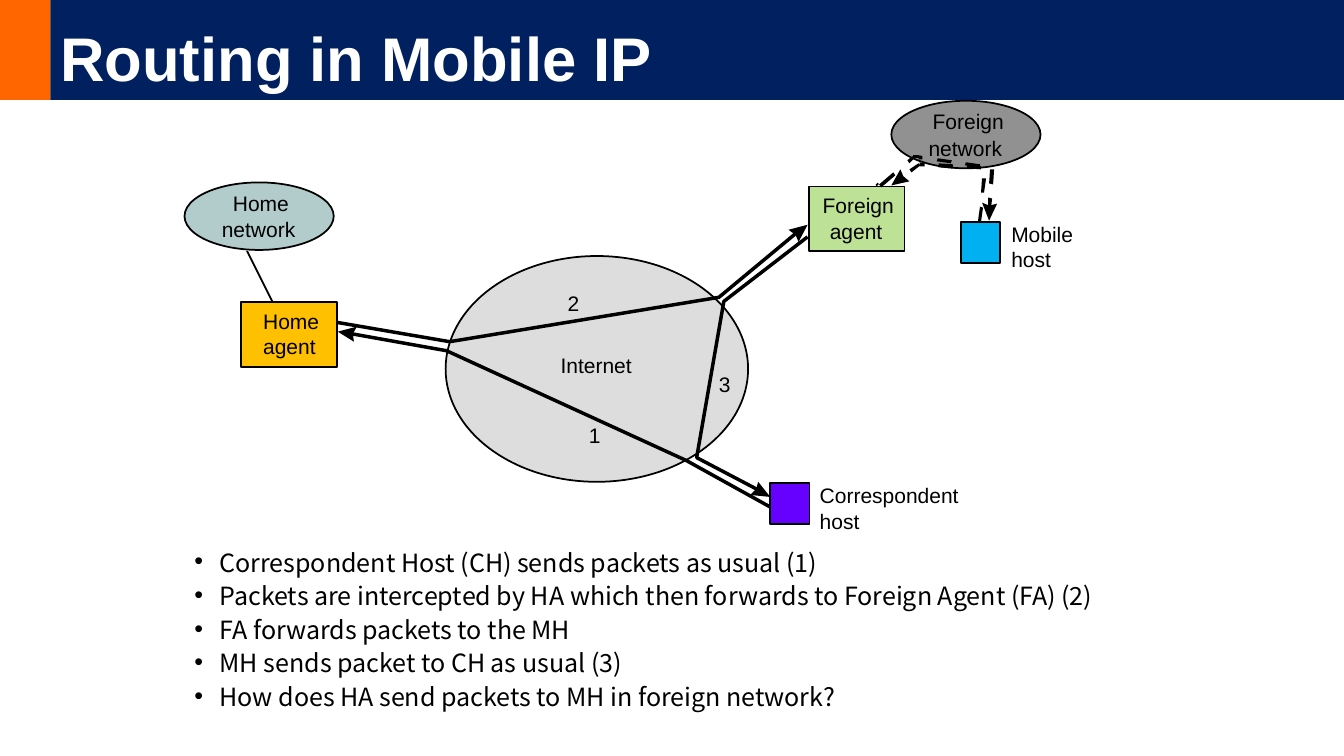
from pptx import Presentation
from pptx.util import Inches, Pt
from pptx.dml.color import RGBColor
from pptx.enum.shapes import MSO_SHAPE as Shape, MSO_CONNECTOR as Link
from pptx.enum.text import MSO_ANCHOR as Anchor, MSO_AUTO_SIZE as Fit, PP_ALIGN as Align
from pptx.oxml.ns import qn
from lxml import etree

HEX = {"orange": "FF6600", "navy": "002060", "white": "FFFFFF", "black": "000000",
       "green": "92D050", "gold": "FFC000", "pale": "DDDDDD", "teal": "B1CCCB",
       "grey": "919191", "violet": "6600FF", "blue": "00B0F0"}

TITLE = "Routing in Mobile IP"
BULLETS = [
    "Correspondent Host (CH) sends packets as usual (1)",
    "Packets are intercepted by HA which then forwards to Foreign Agent (FA) (2)",
    "FA forwards packets to the MH",
    "MH sends packet to CH as usual (3)",
    "How does HA send packets to MH in foreign network?",
]

# Nodes: shape, left, top, width, height, colour
AGENT, CLOUD, HOST = (0.95, 0.64), (1.48, 0.67), (0.39, 0.41)
NODES = [
    (Shape.RECTANGLE, 8.02, 1.85, *AGENT, "green"),
    (Shape.RECTANGLE, 2.39, 3, *AGENT, "gold"),
    (Shape.OVAL, 4.42, 2.54, 3, 2.24, "pale"),
    (Shape.OVAL, 1.83, 1.81, *CLOUD, "teal"),
    (Shape.OVAL, 8.84, 1, *CLOUD, "grey"),
    (Shape.RECTANGLE, 7.64, 4.79, *HOST, "violet"),
    (Shape.RECTANGLE, 9.53, 2.2, *HOST, "blue"),
]

# Labels: text, left, top, width
LABELS = [
    ("Home", 2.61, 3.06, 0.56), ("agent", 2.61, 3.31, 0.52),
    ("Foreign", 8.16, 1.91, 0.71), ("agent", 8.23, 2.17, 0.52),
    ("Home", 2.31, 1.89, 0.56), ("network", 2.2, 2.15, 0.73),
    ("Foreign", 9.25, 1.08, 0.71), ("network", 9.21, 1.34, 0.73),
    ("Internet", 5.56, 3.5, 0.71),
    ("Correspondent", 8.13, 4.79, 1.38), ("host", 8.13, 5.04, 0.39),
    ("Mobile", 10.03, 2.2, 0.62), ("host", 10.03, 2.45, 0.39),
    ("1", 5.84, 4.19, 0.12), ("2", 5.63, 2.88, 0.12), ("3", 7.13, 3.69, 0.12),
]
SLACK = 0.03  # spare width that keeps each label on one line

# Plain links between nodes
LINKS = [((2.45, 2.49), (2.7, 2.99)), ((8.69, 1.84), (8.71, 1.82))]

# Packet routes 1, 2 and 3
ROUTES = [
    [(7.64, 5.03), (6.81, 4.57), (4.43, 3.48), (3.48, 3.31)],
    [(3.35, 3.2), (4.46, 3.39), (7.13, 2.95), (7.9, 2.31)],
    [(8.01, 2.35), (7.18, 2.99), (6.91, 4.54), (7.52, 4.86)],
]

HEADS = [
    [(3.54, 3.24), (3.5, 3.31), (3.51, 3.39), (3.35, 3.29)],
    [(7.92, 2.4), (7.89, 2.33), (7.82, 2.28), (8.01, 2.23)],
    [(9.74, 2.01), (9.81, 2.04), (9.89, 2.02), (9.81, 2.19)],
    [(8.93, 1.68), (8.96, 1.75), (9.02, 1.8), (8.84, 1.84)],
    [(7.44, 4.91), (7.5, 4.85), (7.52, 4.78), (7.64, 4.93)],
]

# Dashes from foreign agent to mobile host, then back
DASHES = [
    [(8.72, 1.83), (8.74, 1.86), (8.88, 1.74), (8.86, 1.71)],
    [(9, 1.59), (9.02, 1.62), (9.07, 1.57), (9.05, 1.55)],
    [(9.06, 1.54), (9.11, 1.54), (9.11, 1.57), (9.06, 1.57)],
    [(9.12, 1.54), (9.11, 1.58), (9.15, 1.58), (9.15, 1.55)],
    [(9.3, 1.57), (9.29, 1.6), (9.43, 1.62), (9.44, 1.59)],
    [(9.58, 1.61), (9.57, 1.64), (9.72, 1.66), (9.72, 1.63)],
    [(9.86, 1.68), (9.82, 1.68), (9.81, 1.82), (9.85, 1.83)],
    [(9.84, 1.97), (9.8, 1.96), (9.8, 2.06), (9.83, 2.06)],
    [(9.7, 2.19), (9.73, 2.2), (9.75, 2.06), (9.72, 2.05)],
    [(9.73, 1.91), (9.76, 1.91), (9.78, 1.77), (9.74, 1.77)],
    [(9.73, 1.68), (9.73, 1.65), (9.59, 1.64), (9.59, 1.67)],
    [(9.45, 1.67), (9.45, 1.63), (9.31, 1.62), (9.31, 1.66)],
    [(9.17, 1.65), (9.17, 1.62), (9.12, 1.61), (9.12, 1.65)],
    [(9.13, 1.64), (9.11, 1.62), (9.02, 1.68), (9.04, 1.71)],
]

deck = Presentation()
deck.slide_width, deck.slide_height = Inches(13.33), Inches(7.5)
slide = deck.slides.add_slide(deck.slide_layouts[6])
shapes = slide.shapes


def color(name):
    return RGBColor.from_string(HEX[name])


def paint(shape, fill=None, width=None):
    shape.shadow.inherit = False
    if fill:
        shape.fill.solid()
        shape.fill.fore_color.rgb = color(fill)
    else:
        shape.fill.background()
    if width:
        shape.line.color.rgb = color("black")
        shape.line.width = Pt(width)
    else:
        shape.line.fill.background()


def add_box(kind, x, y, w, h, fill, width=None):
    box = shapes.add_shape(kind, *map(Inches, (x, y, w, h)))
    paint(box, fill, width)
    return box


def add_free(points, close, fill=None, width=None):
    spots = [(Inches(x), Inches(y)) for x, y in points]
    pen = shapes.build_freeform(*spots[0], scale=1.0)
    pen.add_line_segments(spots[1:], close=close)
    paint(pen.convert_to_shape(), fill, width)


def style(para, face, size, tint="black", bold=False):
    for run in para.runs:
        font = run.font
        font.name, font.size, font.bold = face, Pt(size), bold
        font.color.rgb = color(tint)


# Title band
add_box(Shape.RECTANGLE, 0, 0, 0.5, 0.99, "orange")
band = add_box(Shape.RECTANGLE, 0.5, 0, 12.83, 0.99, "navy")
frame = band.text_frame
frame.text = TITLE
frame.vertical_anchor = Anchor.BOTTOM
head = frame.paragraphs[0]
head.alignment = Align.LEFT
head.line_spacing = 0.9
style(head, "Arial", 44, "white", True)

# Bullet list
frame = shapes.add_textbox(*map(Inches, (1.83, 5.46, 9.91, 1.87))).text_frame
frame.word_wrap = True
frame.text = "\n".join(BULLETS)
for para in frame.paragraphs:
    para.line_spacing = 0.7
    para.space_before = Pt(8.95)
    props = para._p.get_or_add_pPr()
    props.set("marL", str(Inches(0.25)))
    props.set("indent", str(-Inches(0.25)))
    etree.SubElement(props, qn("a:buFont")).set("typeface", "Arial")
    etree.SubElement(props, qn("a:buChar")).set("char", "•")
    style(para, "Noto Sans CJK KR", 17.9)

# Network nodes
for kind, x, y, w, h, fill in NODES:
    node = add_box(kind, x, y, w, h, fill, 1.25)
    if fill == "green":
        tone = node.fill._xPr.find(qn("a:solidFill"))[0]
        etree.SubElement(tone, qn("a:alpha")).set("val", "60000")

# Labels
for text, x, y, w in LABELS:
    frame = shapes.add_textbox(*map(Inches, (x, y, w + SLACK, 0.25))).text_frame
    frame.margin_left = frame.margin_right = frame.margin_top = frame.margin_bottom = 0
    frame.word_wrap = False
    frame.auto_size = Fit.SHAPE_TO_FIT_TEXT
    frame.text = text
    style(frame.paragraphs[0], "Arial", 15)

# Links, routes and arrows
for start, end in LINKS:
    link = shapes.add_connector(Link.STRAIGHT, *map(Inches, start + end))
    link.line.color.rgb = color("black")
    link.line.width = Pt(1.25)
    etree.SubElement(link._element.spPr, qn("a:effectLst"))
for route in ROUTES:
    add_free(route, False, width=2.5)
for piece in HEADS + DASHES:
    add_free(piece, True, fill="black")

deck.save("out.pptx")
